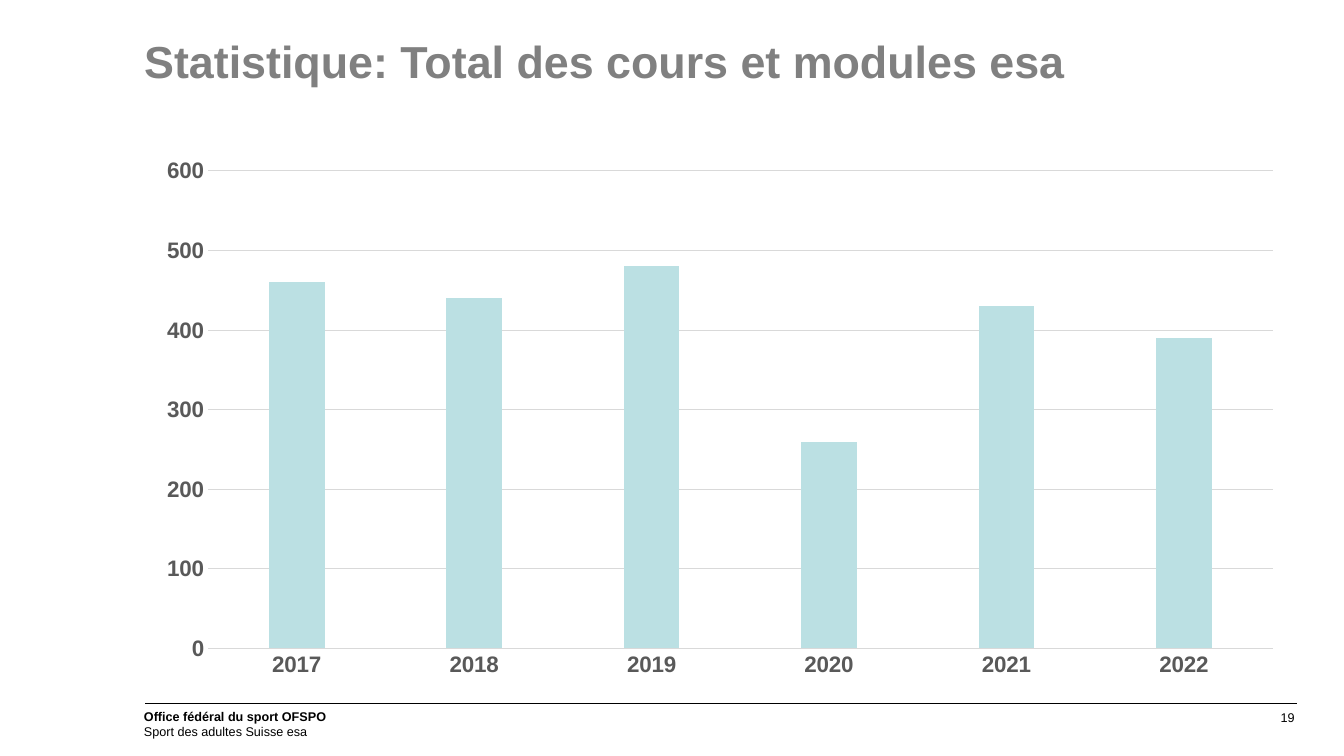
from dataclasses import dataclass
from lxml import etree
from pptx import Presentation
from pptx import util as u
from pptx.chart import data as cd
from pptx.dml import color as col
from pptx.enum import chart as ch, shapes, text

PX = 9144


@dataclass(frozen=True)
class Theme:
    font: str = "Arial"
    title: str = "808080"
    axis: str = "595959"
    grid: str = "D9D9D9"
    bar: str = "BBE0E3"
    ink: str = "000000"
    head: int = 32
    tick: int = 16
    foot: int = 9
    rule: float = 0.75


T = Theme()


def box(*nums):
    return [u.Emu(n * PX) for n in nums]


def put(obj, vals):
    for key, val in vals.items():
        setattr(obj, key, val)


def style(font, size, hue, bold=False):
    put(font, {"name": T.font, "size": u.Pt(size), "bold": bold})
    font.color.rgb = col.RGBColor.from_string(hue)


def stroke(line, hue):
    line.width = u.Pt(T.rule)
    line.color.rgb = col.RGBColor.from_string(hue)


def heading(slide, words, area):
    shape = slide.shapes.title
    put(shape, dict(zip(("left", "top", "width", "height"), box(*area))))
    frame = shape.text_frame
    frame.text = words
    put(frame, {"margin_left": 0, "margin_right": 0, "word_wrap": True,
                "auto_size": text.MSO_AUTO_SIZE.NONE,
                "vertical_anchor": text.MSO_ANCHOR.TOP})
    para = frame.paragraphs[0]
    para.alignment = text.PP_ALIGN.LEFT
    style(para.runs[0].font, T.head, T.title, True)


def label(slide, lines, area, side=text.PP_ALIGN.LEFT, pad=None):
    frame = slide.shapes.add_textbox(*box(*area)).text_frame
    frame.word_wrap = True
    if pad is not None:
        put(frame, {f"margin_{edge}": pad
                    for edge in ("left", "top", "right", "bottom")})
    frame.text = "\n".join(words for words, _ in lines)
    for para, (_, bold) in zip(frame.paragraphs, lines):
        para.alignment = side
        style(para.runs[0].font, T.foot, T.ink, bold)


def rule(slide, ends):
    line = slide.shapes.add_connector(shapes.MSO_CONNECTOR.STRAIGHT, *box(*ends))
    stroke(line.line, T.ink)
    props = line._element.spPr
    etree.SubElement(props, props.tag.replace("}spPr", "}effectLst").replace(
        "presentationml", "drawingml").replace("/2006/main", "/2006/main"))


def bars(slide, name, years, counts, area):
    data = cd.CategoryChartData()
    data.categories = years
    data.add_series(name, counts)
    kind = ch.XL_CHART_TYPE.COLUMN_CLUSTERED
    chart = slide.shapes.add_chart(kind, *box(*area), data).chart
    put(chart, {"has_legend": False, "has_title": False})
    style(chart.font, T.tick, T.axis, True)
    plot = chart.plots[0]
    put(plot, {"gap_width": 219, "overlap": -27, "vary_by_categories": False})
    fill = plot.series[0].format.fill
    fill.solid()
    fill.fore_color.rgb = col.RGBColor.from_string(T.bar)
    for axis in (chart.category_axis, chart.value_axis):
        put(axis, {"major_tick_mark": ch.XL_TICK_MARK.NONE,
                   "minor_tick_mark": ch.XL_TICK_MARK.NONE})
        style(axis.tick_labels.font, T.tick, T.axis, True)
    stroke(chart.category_axis.format.line, T.grid)
    axis = chart.value_axis
    put(axis, {"minimum_scale": 0, "maximum_scale": 600, "major_unit": 100,
               "has_major_gridlines": True})
    axis.format.line.fill.background()
    stroke(axis.major_gridlines.format.line, T.grid)


def main():
    deck = Presentation()
    deck.slide_width, deck.slide_height = box(1333, 750)
    slide = deck.slides.add_slide(deck.slide_layouts[5])
    heading(slide, "Statistique: Total des cours et modules esa",
            (143, 28, 1142, 114))
    bars(slide, "Total", [str(year) for year in range(2017, 2023)],
         (460, 440, 480, 260, 430, 390), (143, 147, 1142, 535))
    rule(slide, (144, 698, 1286, 698))
    label(slide, [("Office fédéral du sport OFSPO", True),
                  ("Sport des adultes Suisse esa", False)], (133, 698, 570, 40))
    label(slide, [("19", False)], (962, 704, 322, 16), text.PP_ALIGN.RIGHT, 0)
    deck.save("out.pptx")


if __name__ == "__main__":
    main()
